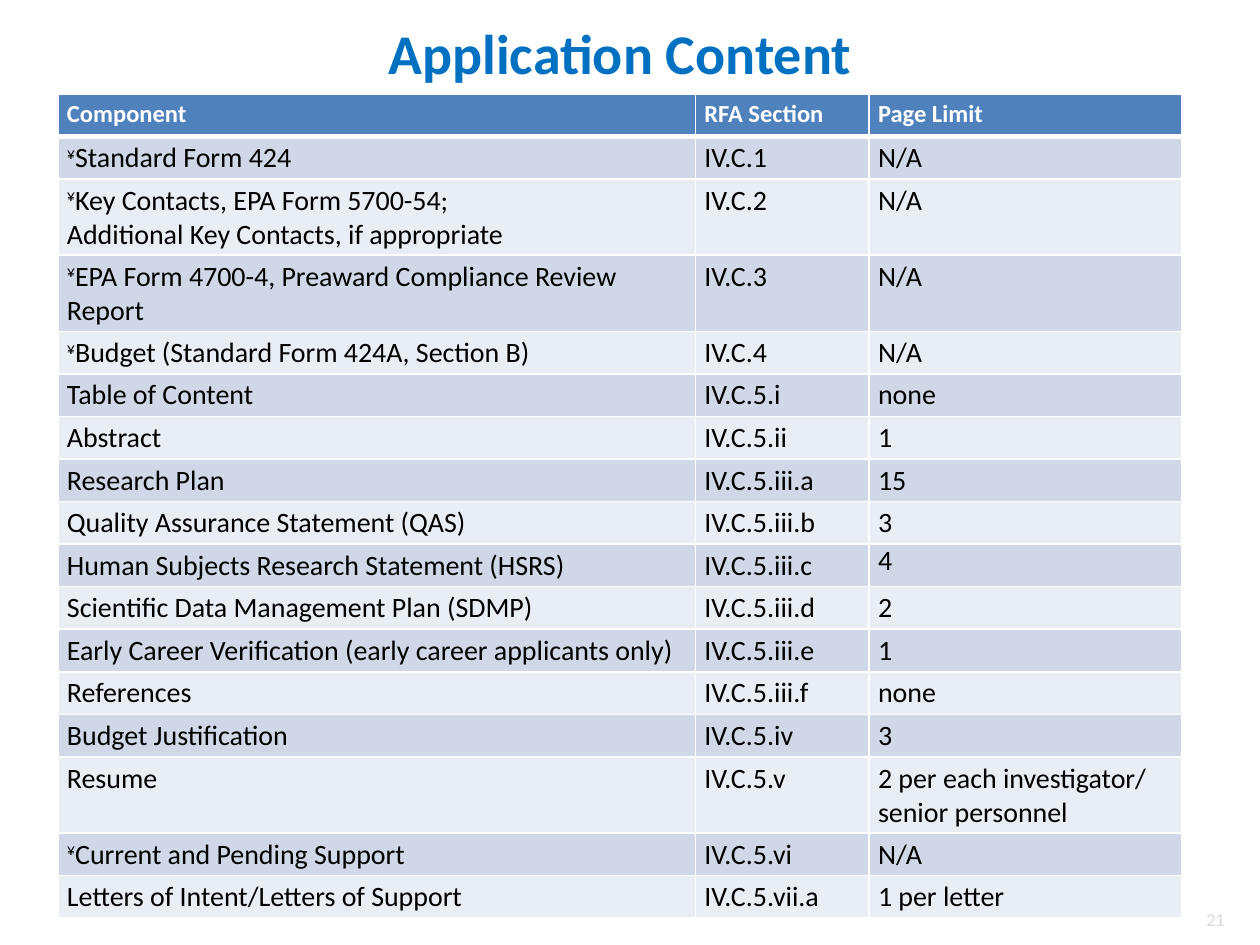
import lxml.etree
import pptx
import pptx.dml.color
import pptx.enum.text
import pptx.oxml.ns
import pptx.util

Cm = pptx.util.Cm
ALIGN = pptx.enum.text.PP_ALIGN
FONT = "Calibri"
MARK = "¥"
HEADER_FILL = "4F81BD"
BAND_FILLS = ("D0D8E8", "E9EDF4")
COLUMN_WIDTHS = (12.85, 3.5, 6.3)
LINE_ROW, DOUBLE_ROW = 0.84, 1.4

HEADER = ("Component", "RFA Section", "Page Limit")
COMPONENTS = (
    ("¥Standard Form 424", "IV.C.1", "N/A"),
    ("¥Key Contacts, EPA Form 5700-54;\nAdditional Key Contacts, if appropriate", "IV.C.2", "N/A"),
    ("¥EPA Form 4700-4, Preaward Compliance Review Report", "IV.C.3", "N/A"),
    ("¥Budget (Standard Form 424A, Section B)", "IV.C.4", "N/A"),
    ("Table of Content", "IV.C.5.i", "none"),
    ("Abstract", "IV.C.5.ii", "1"),
    ("Research Plan", "IV.C.5.iii.a", "15"),
    ("Quality Assurance Statement (QAS)", "IV.C.5.iii.b", "3"),
    ("Human Subjects Research Statement (HSRS)", "IV.C.5.iii.c", "4"),
    ("Scientific Data Management Plan (SDMP)", "IV.C.5.iii.d", "2"),
    ("Early Career Verification (early career applicants only)", "IV.C.5.iii.e", "1"),
    ("References", "IV.C.5.iii.f", "none"),
    ("Budget Justification", "IV.C.5.iv", "3"),
    ("Resume", "IV.C.5.v", "2 per each investigator/ senior personnel"),
    ("¥Current and Pending Support", "IV.C.5.vi", "N/A"),
    ("Letters of Intent/Letters of Support", "IV.C.5.vii.a", "1 per letter"),
)
DOUBLE_ROWS = (2, 3)
FLUSH_CELL = (9, 2)


def color(value):
    return pptx.dml.color.RGBColor.from_string(value)


def format_runs(paragraph, size, font_color, bold=False):
    for run in paragraph.runs:
        run.font.name = FONT
        run.font.size = pptx.util.Pt(size)
        run.font.bold = bold
        run.font.color.rgb = color(font_color)


def add_text(slide, box, text, size, font_color, alignment, bold=False):
    shape = slide.shapes.add_textbox(*(Cm(length) for length in box))
    frame = shape.text_frame
    frame.word_wrap = True
    frame.vertical_anchor = pptx.enum.text.MSO_ANCHOR.MIDDLE
    frame.text = text
    paragraph = frame.paragraphs[0]
    paragraph.alignment = alignment
    format_runs(paragraph, size, font_color, bold)


def set_borders(cell, bottom_width):
    properties = cell._tc.get_or_add_tcPr()
    qn = pptx.oxml.ns.qn
    for side, width in (("L", 1), ("R", 1), ("T", 1), ("B", bottom_width)):
        line = lxml.etree.SubElement(properties, qn("a:ln" + side), w=str(pptx.util.Pt(width)))
        fill = lxml.etree.SubElement(line, qn("a:solidFill"))
        lxml.etree.SubElement(fill, qn("a:srgbClr"), val="FFFFFF")


def raise_mark(paragraph):
    text = paragraph.text
    if text.startswith(MARK):
        paragraph.text = MARK
        paragraph.runs[0]._r.get_or_add_rPr().set("baseline", "30000")
        paragraph.add_run().text = text[len(MARK):]


def fill_cell(cell, text, fill, size, font_color, is_header, vertical_margin):
    cell.margin_left = cell.margin_right = Cm(0.18)
    cell.margin_top = cell.margin_bottom = Cm(vertical_margin)
    set_borders(cell, 3 if is_header else 1)
    cell.fill.solid()
    cell.fill.fore_color.rgb = color(fill)
    cell.text_frame.text = text
    for paragraph in cell.text_frame.paragraphs:
        raise_mark(paragraph)
        format_runs(paragraph, size, font_color, is_header)


def add_component_table(slide):
    rows = (HEADER,) + COMPONENTS
    heights = [DOUBLE_ROW if index in DOUBLE_ROWS else LINE_ROW for index in range(len(rows))]
    table = slide.shapes.add_table(
        len(rows), len(HEADER), Cm(1.17), Cm(1.91), Cm(sum(COLUMN_WIDTHS)), Cm(sum(heights))
    ).table
    for column, width in zip(table.columns, COLUMN_WIDTHS):
        column.width = Cm(width)
    for row_index, values in enumerate(rows):
        table.rows[row_index].height = Cm(heights[row_index])
        is_header = row_index == 0
        fill = HEADER_FILL if is_header else BAND_FILLS[(row_index - 1) % 2]
        size, font_color = (14, "FFFFFF") if is_header else (16, "000000")
        for column_index, text in enumerate(values):
            margin = 0 if (row_index, column_index) == FLUSH_CELL else 0.09
            cell = table.cell(row_index, column_index)
            fill_cell(cell, text, fill, size, font_color, is_header, margin)


def main():
    presentation = pptx.Presentation()
    presentation.slide_width, presentation.slide_height = Cm(25.4), Cm(19.05)
    slide = presentation.slides.add_slide(presentation.slide_layouts[6])
    add_text(slide, (19.66, 18.14, 5.28, 0.76), "21", 10.5, "D9D9D9", ALIGN.RIGHT)
    add_text(slide, (1.07, 0, 22.86, 2.11), "Application Content", 32, "0070C0", ALIGN.CENTER, True)
    add_component_table(slide)
    presentation.save("out.pptx")


if __name__ == "__main__":
    """Build the application content slide."""
    main()
